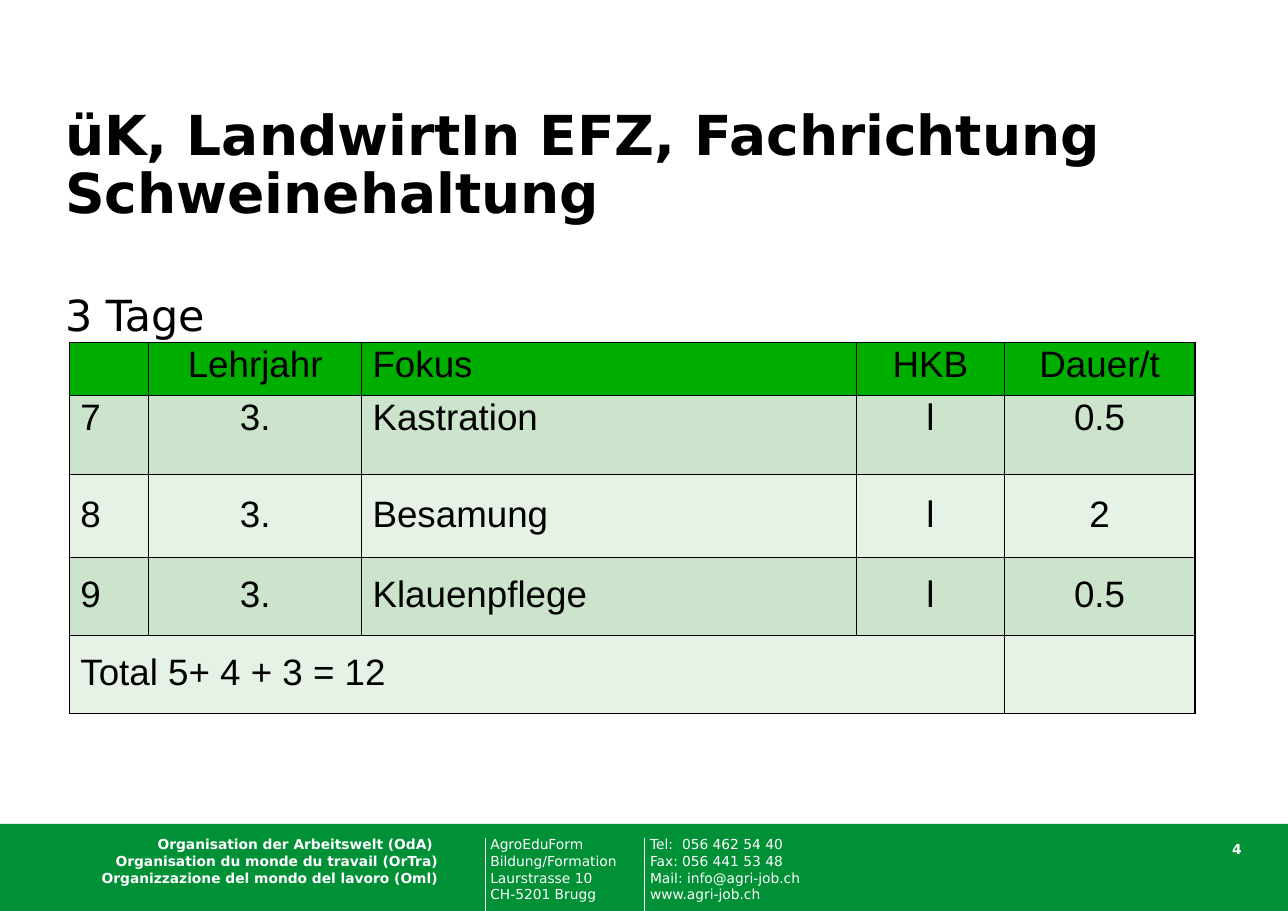
import pptx
import pptx.dml.color
import pptx.enum.shapes
import pptx.enum.text
import pptx.oxml
import pptx.oxml.ns
import pptx.util
from lxml import etree

RGBColor = pptx.dml.color.RGBColor
PP_ALIGN = pptx.enum.text.PP_ALIGN
MSO_ANCHOR = pptx.enum.text.MSO_ANCHOR
qn = pptx.oxml.ns.qn
Pt = pptx.util.Pt

BLACK = RGBColor(0x00, 0x00, 0x00)
WHITE = RGBColor(0xFF, 0xFF, 0xFF)
FOOTER_GREEN = RGBColor(0x00, 0x90, 0x36)
HEADER_GREEN = RGBColor(0x00, 0xAE, 0x00)
BANDS = [RGBColor(0xCC, 0xE3, 0xCC), RGBColor(0xE7, 0xF2, 0xE7)]

COLUMNS = [0.72, 1.93, 4.49, 1.34, 1.73]
ROWS = [0.48, 0.72, 0.75, 0.71, 0.71]
CENTERED = {1, 3, 4}
COURSES = [
    ["", "Lehrjahr", "Fokus", "HKB", "Dauer/t"],
    ["7", "3.", "Kastration", "l", "0.5"],
    ["8", "3.", "Besamung", "l", "2"],
    ["9", "3.", "Klauenpflege", "l", "0.5"],
    ["Total 5+ 4 + 3 = 12", "", "", "", ""],
]


def part(box, left, top, width, height):
    """Return the part of a box given by percentages of its size."""
    x, y, w, h = box
    return (int(x + w * left / 100), int(y + h * top / 100),
            int(w * width / 100), int(h * height / 100))


def style(p, size, color, font, bold=False):
    """Format every run of a paragraph."""
    for r in p.runs:
        r.font.size = Pt(size)
        r.font.name = font
        r.font.bold = bold
        r.font.color.rgb = color


def zero_margins(tf):
    """Remove the insets of a text frame."""
    tf.margin_left = tf.margin_top = tf.margin_right = tf.margin_bottom = 0
    tf.word_wrap = True


def add_title(s, box):
    """Place the course title with the number of days below it."""
    sp = s.shapes.title
    sp.left, sp.top, sp.width, sp.height = box
    tf = sp.text_frame
    zero_margins(tf)
    tf.auto_size = pptx.enum.text.MSO_AUTO_SIZE.NONE
    tf.vertical_anchor = MSO_ANCHOR.TOP
    tf.text = "üK, LandwirtIn EFZ, Fachrichtung Schweinehaltung\n3 Tage"
    for p, size, bold, gap in zip(tf.paragraphs, (36, 28), (True, False), (0, 38)):
        p.alignment = PP_ALIGN.LEFT
        p.line_spacing = Pt(38)
        p.space_before = Pt(gap)
        style(p, size, BLACK, "DejaVu Sans", bold)


def add_borders(cell):
    """Draw thin black borders around a table cell."""
    tcPr = cell._tc.get_or_add_tcPr()
    for side in ("a:lnL", "a:lnR", "a:lnT", "a:lnB"):
        ln = etree.SubElement(tcPr, qn(side), w=str(Pt(1)))
        fill = etree.SubElement(ln, qn("a:solidFill"))
        etree.SubElement(fill, qn("a:srgbClr"), val=str(BLACK))


def add_courses(s, box):
    """Place the course table."""
    tbl = s.shapes.add_table(len(ROWS), len(COLUMNS), *box).table
    for column, share in zip(tbl.columns, COLUMNS):
        column.width = int(box[2] * share / sum(COLUMNS))
    for row, share in zip(tbl.rows, ROWS):
        row.height = int(box[3] * share / sum(ROWS))
    for i, texts in enumerate(COURSES):
        for j, text in enumerate(texts):
            cell = tbl.cell(i, j)
            add_borders(cell)
            cell.fill.solid()
            cell.fill.fore_color.rgb = BANDS[(i - 1) % 2] if i else HEADER_GREEN
            cell.vertical_anchor = MSO_ANCHOR.MIDDLE if i > 1 else MSO_ANCHOR.TOP
            p = cell.text_frame.paragraphs[0]
            p.text = text
            p.alignment = PP_ALIGN.CENTER if j in CENTERED else PP_ALIGN.LEFT
            p.line_spacing = 0.9
            style(p, 24, BLACK, "Arial")
    tbl.cell(4, 0).merge(tbl.cell(4, 3))


def add_footer_text(s, box, text, align=PP_ALIGN.LEFT, bold=False, tab=None):
    """Place one block of small white text."""
    tf = s.shapes.add_textbox(*box).text_frame
    zero_margins(tf)
    tf.text = text
    for p in tf.paragraphs:
        p.alignment = align
        if tab:
            tabs = etree.SubElement(p._p.get_or_add_pPr(), qn("a:tabLst"))
            etree.SubElement(tabs, qn("a:tab"), pos=str(tab), algn="l")
        style(p, 9, WHITE, "DejaVu Sans", bold)


def add_footer(s, box):
    """Place the green band with organisation, address, contact and page number."""
    band = s.shapes.add_shape(pptx.enum.shapes.MSO_SHAPE.RECTANGLE, *box)
    band.shadow.inherit = False
    band.fill.solid()
    band.fill.fore_color.rgb = FOOTER_GREEN
    band.line.fill.background()
    for left in (37.72, 50.04):
        x, y, w, h = part(box, left, 16.5, 0, 83.5)
        rule = s.shapes.add_connector(
            pptx.enum.shapes.MSO_CONNECTOR.STRAIGHT, x, y, x, y + h)
        rule.line.color.rgb = WHITE
        rule.line.width = Pt(0.75)
        etree.SubElement(rule._element.spPr, qn("a:effectLst"))
    add_footer_text(
        s, part(box, 5.13, 14, 28.83, 57),
        "Organisation der Arbeitswelt (OdA) \n"
        "Organisation du monde du travail (OrTra)\n"
        "Organizzazione del mondo del lavoro (Oml)", PP_ALIGN.RIGHT, True)
    add_footer_text(
        s, part(box, 38.07, 14, 11.5, 76),
        "AgroEduForm\nBildung/Formation\nLaurstrasse 10\nCH-5201 Brugg")
    add_footer_text(
        s, part(box, 50.47, 14, 16, 76),
        "Tel:\t056 462 54 40\nFax:\t056 441 53 48\n"
        "Mail: info@agri-job.ch\nwww.agri-job.ch", tab=pptx.util.Inches(0.29))
    add_footer_text(s, part(box, 93.4, 19, 3, 18), "4", PP_ALIGN.RIGHT, True)


def main():
    """Build the slide and save it."""
    prs = pptx.Presentation()
    prs.slide_width = pptx.util.Inches(11.69)
    prs.slide_height = pptx.util.Inches(8.27)
    page = (0, 0, prs.slide_width, prs.slide_height)
    s = prs.slides.add_slide(prs.slide_layouts[5])
    add_footer(s, part(page, 0, 90.45, 100, 9.55))
    add_title(s, part(page, 5.05, 11.85, 90, 12.45))
    add_courses(s, part(page, 5.39, 37.61, 87.4, 40.75))
    prs.save("out.pptx")


if __name__ == "__main__":
    main()
